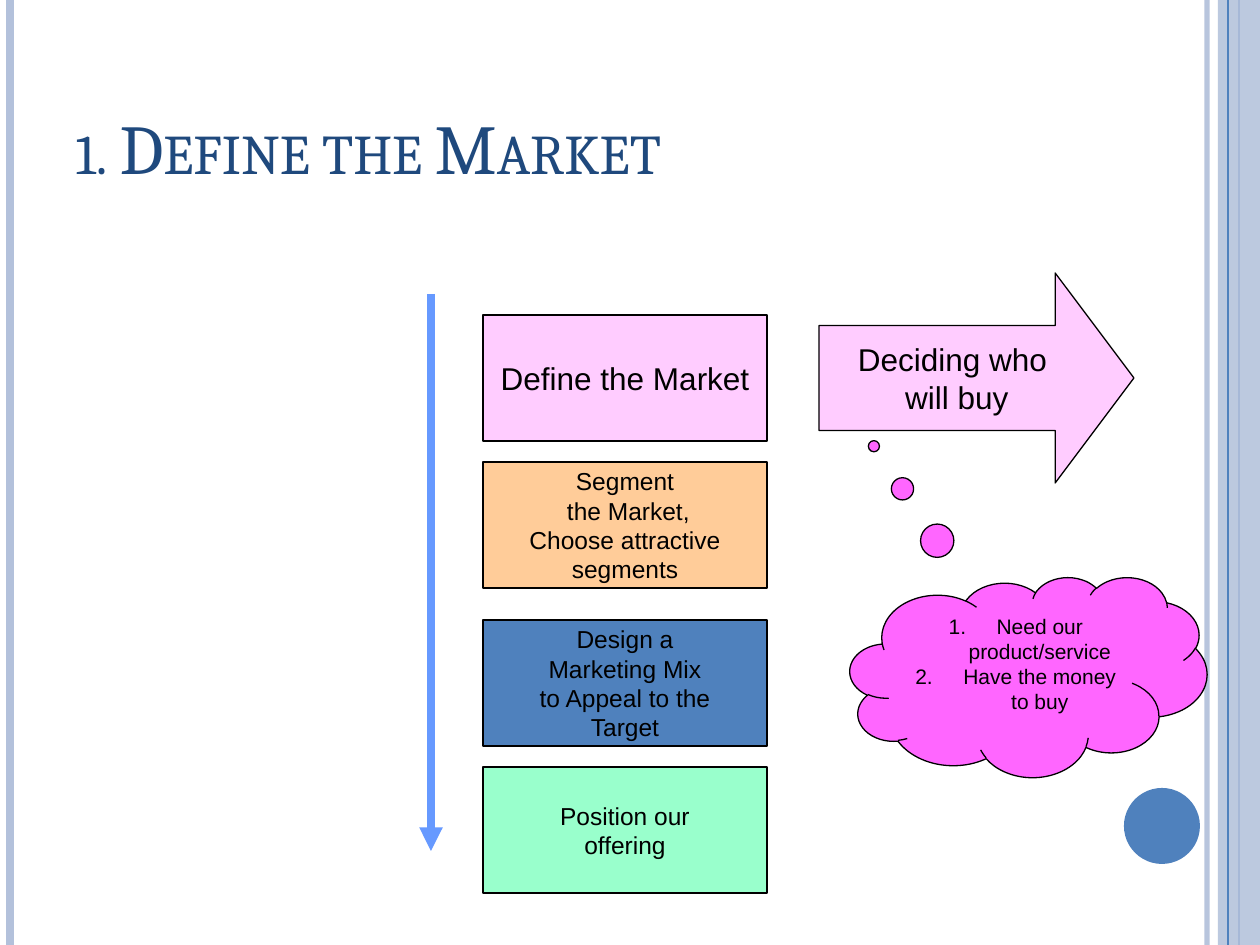
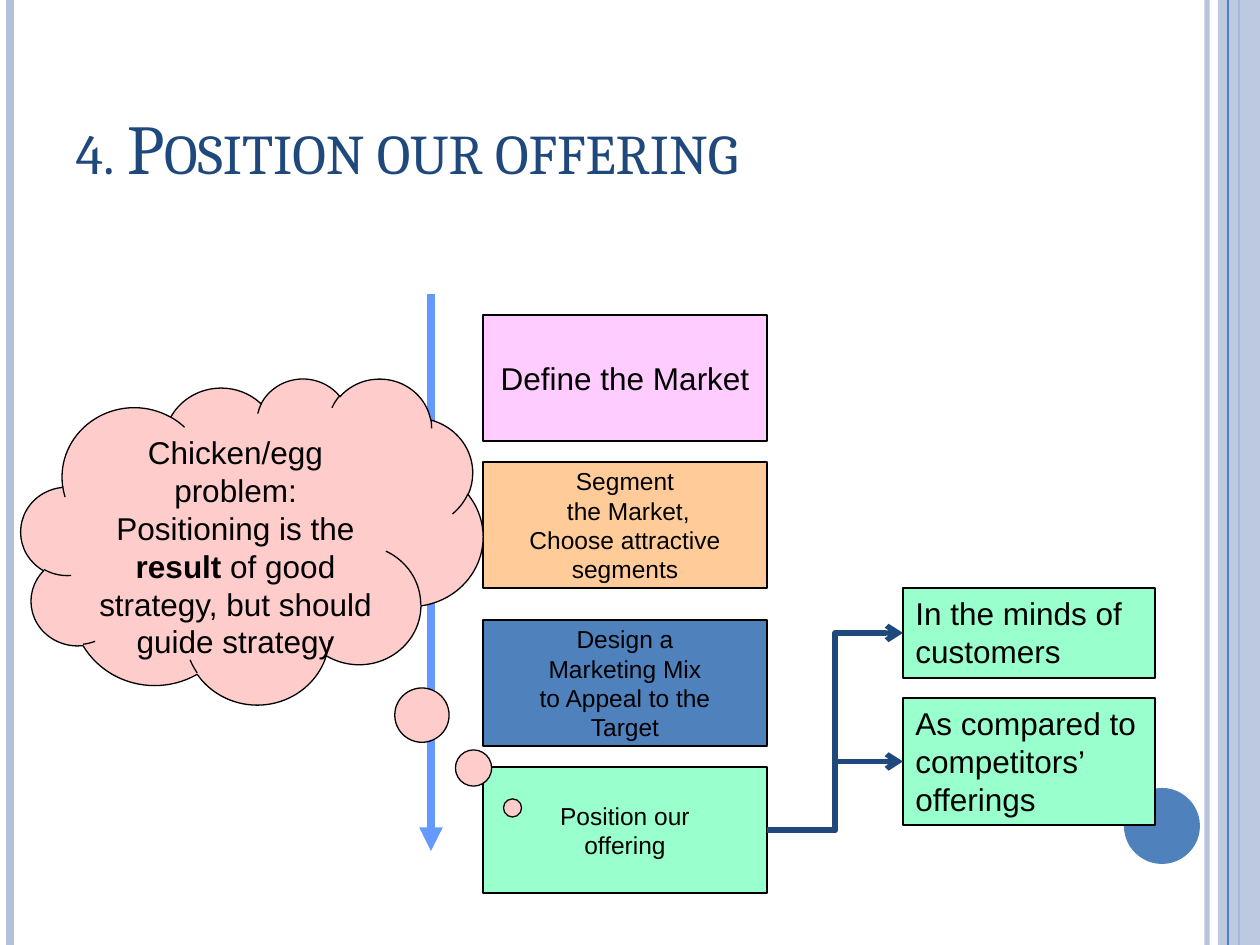
from lxml import etree
from pptx import Presentation
from pptx.dml.color import RGBColor
from pptx.enum.shapes import MSO_CONNECTOR, MSO_SHAPE
from pptx.enum.text import MSO_ANCHOR, PP_ALIGN
from pptx.oxml.ns import qn
from pptx.util import Pt

RECTANGLE = MSO_SHAPE.RECTANGLE
OVAL = MSO_SHAPE.OVAL
ARROW = MSO_SHAPE.RIGHT_ARROW
CLOUD = MSO_SHAPE.CLOUD_CALLOUT
STRAIGHT = MSO_CONNECTOR.STRAIGHT
ELBOW = MSO_CONNECTOR.ELBOW
LEFT, CENTER = PP_ALIGN.LEFT, PP_ALIGN.CENTER
TOP, MIDDLE, BOTTOM = MSO_ANCHOR.TOP, MSO_ANCHOR.MIDDLE, MSO_ANCHOR.BOTTOM

PX = 914400 / 126
WIDTH, HEIGHT = 1260, 945
COLOURS = {
    "black": "000000",
    "navy": "1F497D",
    "blue": "4F81BD",
    "pale blue": "B3C1DB",
    "sky": "6699FF",
    "pink": "FFCCFF",
    "magenta": "FF66FF",
    "rose": "FFCCCC",
    "orange": "FFCC99",
    "mint": "99FFCC",
}
COLOURS = {name: RGBColor.from_string(value) for name, value in COLOURS.items()}


def draw_shape(page, kind, place, fill, paragraphs=(), size=18, align=CENTER,
               anchor=MIDDLE, wrap=True, outlined=True):
    shape = page.shapes.add_shape(kind, *(round(length * PX) for length in place))
    shape.shadow.inherit = False
    shape.fill.solid()
    shape.fill.fore_color.rgb = COLOURS[fill]
    if outlined:
        shape.line.color.rgb = COLOURS["black"]
        shape.line.width = Pt(0.75)
    else:
        shape.line.fill.background()
    frame = shape.text_frame
    frame.word_wrap = wrap
    frame.vertical_anchor = anchor
    for number, text in enumerate(paragraphs):
        para = frame.add_paragraph() if number else frame.paragraphs[0]
        para.text = text
        para.alignment = align
        para.font.name = "Arial"
        para.font.size = Pt(size)
        para.font.color.rgb = COLOURS["black"]
    return shape


def draw_line(page, kind, start, end, colour, width, head=None):
    line = page.shapes.add_connector(kind, *(round(length * PX) for length in start + end))
    line.line.color.rgb = COLOURS[colour]
    line.line.width = Pt(width)
    properties = line._element.spPr
    if head:
        etree.SubElement(properties.find(qn("a:ln")), qn("a:tailEnd"), type=head)
    etree.SubElement(properties, qn("a:effectLst"))
    return line


deck = Presentation()
deck.slide_width = round(WIDTH * PX)
deck.slide_height = round(HEIGHT * PX)

STEPS = [
    (315, "pink", 18, "Define the Market"),
    (462, "orange", 14, "Segment\n the Market,\nChoose attractive\nsegments"),
    (620, "blue", 14, "Design a\nMarketing Mix\nto Appeal to the\nTarget"),
    (767, "mint", 14, "Position our\noffering"),
]

pages = []
for heading in ("1. Define the Market", "4. Position our offering"):
    page = deck.slides.add_slide(deck.slide_layouts[5])

    edge = draw_line(page, STRAIGHT, (1207, 0), (1207, HEIGHT), "pale blue", 3)
    draw_line(page, STRAIGHT, (10, 0), (10, HEIGHT), "pale blue", 4.5)
    draw_line(page, STRAIGHT, (1239, 0), (1239, HEIGHT), "blue", 1.5)
    band = draw_shape(page, RECTANGLE, (1218, 0, 42, HEIGHT), "pale blue", outlined=False)
    draw_line(page, STRAIGHT, (1228, 0), (1228, HEIGHT), "blue", 0.75)
    draw_shape(page, OVAL, (1124, 788, 76, 76), "blue", outlined=False)
    for part, opacity in ((edge, 93), (band, 87)):
        colour = next(part._element.iter(qn("a:srgbClr")))
        etree.SubElement(colour, qn("a:alpha"), val=str(opacity * 1000))

    title = page.shapes.title
    title.left, title.top, title.width, title.height = (
        round(length * PX) for length in (63, 38, 1029, 157))
    title.text_frame.text = heading
    title.text_frame.vertical_anchor = BOTTOM
    para = title.text_frame.paragraphs[0]
    para.alignment = LEFT
    para.font.name = "Cambria"
    para.font.size = Pt(40)
    para.font.color.rgb = COLOURS["navy"]
    para._p.pPr.find(qn("a:defRPr")).set("cap", "small")

    for top, fill, size, text in STEPS:
        last_step = draw_shape(page, RECTANGLE, (483, top, 284, 126), fill, [text], size,
                               wrap=False)
    draw_line(page, STRAIGHT, (431, 294), (431, 851), "sky", 4.5, "triangle")
    pages.append((page, last_step))

market_page = pages[0][0]
buyer_arrow = draw_shape(market_page, ARROW, (819, 273, 315, 210), "pink",
                         ["Deciding who \nwill buy"], wrap=False)
buyer_arrow.adjustments[0] = 0.5
buyer_arrow.adjustments[1] = 0.375

buyer_cloud = draw_shape(market_page, CLOUD, (850, 577, 357, 200), "magenta",
                         ["Need our\nproduct/service", "Have the money to buy"], 12,
                         anchor=TOP)
buyer_cloud.adjustments[0] = -0.433
buyer_cloud.adjustments[1] = -1.154
for para in buyer_cloud.text_frame.paragraphs:
    properties = para._p.get_or_add_pPr()
    properties.set("marL", str(round(48 * PX)))
    properties.set("indent", str(round(-48 * PX)))
    properties.insert(0, etree.Element(qn("a:buAutoNum"), type="arabicPeriod"))

position_page, position_step = pages[1]
for top, height, text in (
    (588, 90, "In the minds of customers"),
    (698, 127, "As compared to\ncompetitors’ \nofferings"),
):
    box = draw_shape(position_page, RECTANGLE, (903, top, 252, height), "mint", [text],
                     align=LEFT, anchor=TOP)
    link = draw_line(position_page, ELBOW, (767, 830), (903, top + height // 2),
                     "navy", 3, "arrow")
    link.begin_connect(position_step, 3)
    link.end_connect(box, 1)

puzzle_cloud = draw_shape(position_page, CLOUD, (21, 378, 462, 326), "rose",
                          ["Chicken/egg problem:\nPositioning is the "], anchor=TOP)
puzzle_cloud.adjustments[0] = 0.564
puzzle_cloud.adjustments[1] = 0.819
para = puzzle_cloud.text_frame.paragraphs[0]
for text, bold in (("result", True), (" of good strategy, but should guide strategy", False)):
    span = para.add_run()
    span.text = text
    span.font.bold = bold

deck.save("out.pptx")
